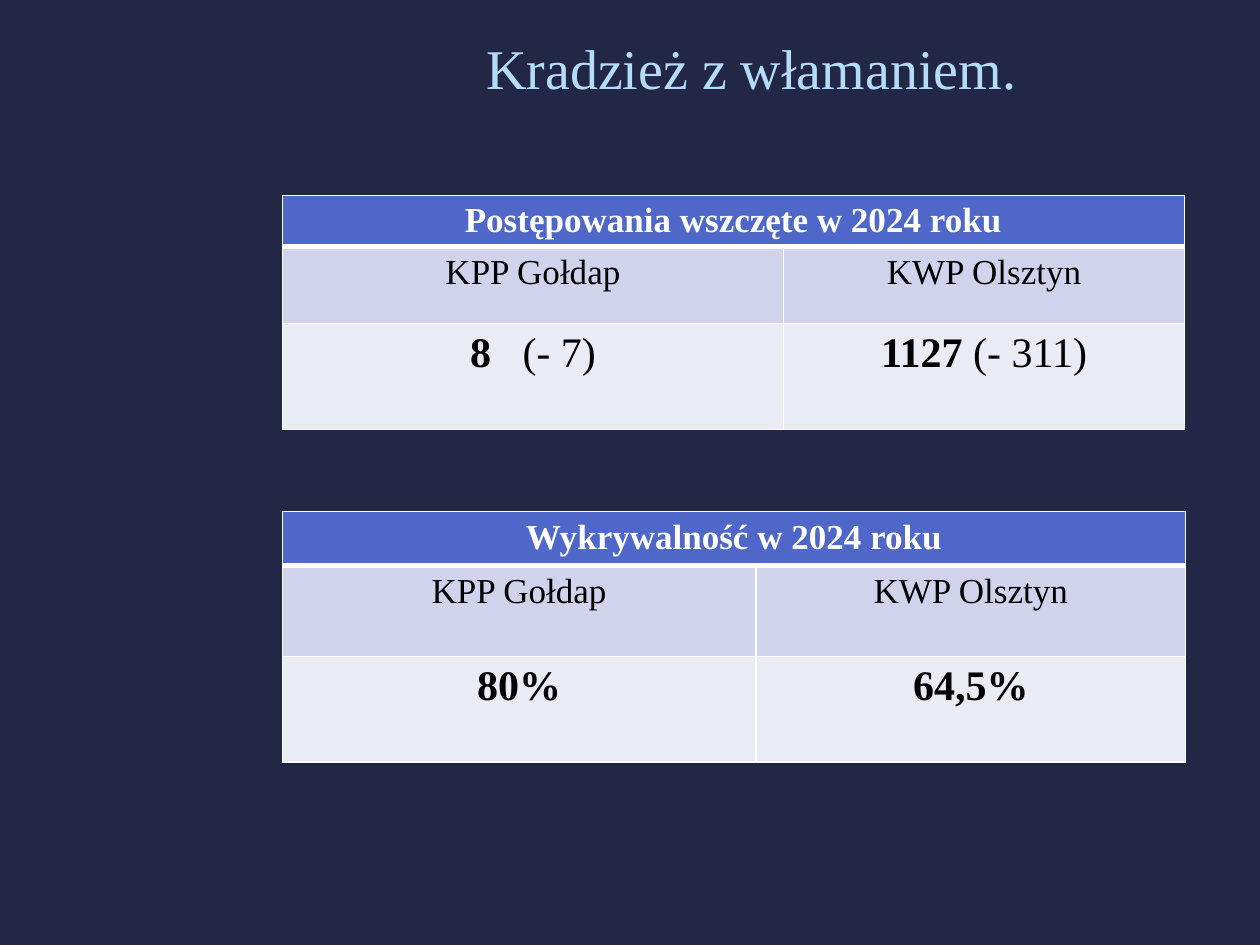
import pptx
import pptx.dml.color
import pptx.enum.text
import pptx.oxml.ns
import pptx.util
from lxml import etree

Inches, Pt = pptx.util.Inches, pptx.util.Pt
RGBColor = pptx.dml.color.RGBColor
CENTER = pptx.enum.text.PP_ALIGN.CENTER

NAVY = RGBColor(0x21, 0x27, 0x45)
SKY = RGBColor(0xB4, 0xDC, 0xFA)
BLUE = RGBColor(0x4E, 0x67, 0xC8)
LAVENDER = RGBColor(0xD0, 0xD3, 0xEB)
PALE = RGBColor(0xE9, 0xEB, 0xF5)
WHITE = RGBColor(0xFF, 0xFF, 0xFF)
BLACK = RGBColor(0, 0, 0)

# Per table row: fill and font of heading, unit names, figures
ROW_STYLES = [
    (BLUE, {"size": Pt(20), "bold": True, "color": WHITE}),
    (LAVENDER, {"size": Pt(20), "bold": False, "color": BLACK}),
    (PALE, {"size": Pt(24), "bold": True, "color": BLACK}),
]
UNITS = ["KPP Gołdap", "KWP Olsztyn"]


def format_font(font, values):
    for key, value in {"name": "Times New Roman", **values}.items():
        if key == "color":
            font.color.rgb = value
        else:
            setattr(font, key, value)


def set_borders(cell, bottom):
    properties = cell._tc.get_or_add_tcPr()
    for side, width in {"L": 1, "R": 1, "T": 1, "B": bottom}.items():
        line = etree.SubElement(
            properties, pptx.oxml.ns.qn(f"a:ln{side}"), w=str(Pt(width)))
        fill = etree.SubElement(line, pptx.oxml.ns.qn("a:solidFill"))
        etree.SubElement(fill, pptx.oxml.ns.qn("a:srgbClr"), val=str(WHITE))


def write_cell(cell, figure, change, gap, font_values):
    """Write a figure and, if given, its change in regular weight after a gap in points."""
    paragraph = cell.text_frame.paragraphs[0]
    paragraph.alignment = CENTER
    parts = [(figure, {})]
    if change:
        parts += [(" ", {"bold": False}), (change, {"bold": False})]
    for text, extra in parts:
        run = paragraph.add_run()
        run.text = text
        format_font(run.font, {**font_values, **extra})
        if text == " " and gap:
            run._r.get_or_add_rPr().set("spc", str(gap * 100))


def add_title(slide, text, left, top, width, height):
    title = slide.shapes.title
    title.left, title.top, title.width, title.height = left, top, width, height
    frame = title.text_frame
    frame.text = text
    frame.vertical_anchor = pptx.enum.text.MSO_ANCHOR.MIDDLE
    frame.paragraphs[0].alignment = CENTER
    format_font(frame.paragraphs[0].runs[0].font, {"size": Pt(32), "color": SKY})


def add_statistics(slide, heading, figures, left, top, column_widths, row_heights):
    table = slide.shapes.add_table(
        3, 2, left, top, sum(column_widths), sum(row_heights)).table
    for column, width in zip(table.columns, column_widths):
        column.width = width
    for row, height in zip(table.rows, row_heights):
        row.height = height
    table.cell(0, 0).merge(table.cell(0, 1))

    contents = [[(heading, "", 0)], [(unit, "", 0) for unit in UNITS], figures]
    for index, (row, (fill, font_values)) in enumerate(zip(contents, ROW_STYLES)):
        for cell in table.rows[index].cells:
            set_borders(cell, bottom=3 if index == 0 else 1)
            cell.fill.solid()
            cell.fill.fore_color.rgb = fill
        for column, (figure, change, gap) in enumerate(row):
            write_cell(table.cell(index, column), figure, change, gap, font_values)


def main():
    presentation = pptx.Presentation()
    presentation.slide_width, presentation.slide_height = Inches(10), Inches(7.5)
    slide = presentation.slides.add_slide(presentation.slide_layouts[5])
    slide.background.fill.solid()
    slide.background.fill.fore_color.rgb = NAVY

    add_title(slide, "Kradzież z włamaniem.",
              Inches(1.93), Inches(0), Inches(8.07), Inches(1.07))
    add_statistics(
        slide, "Postępowania wszczęte w 2024 roku",
        [("8", "(- 7)", 12), ("1127", "(- 311)", 0)],
        Inches(2.24), Inches(1.55), [Inches(3.98), Inches(3.18)],
        [Inches(0.4), Inches(0.61), Inches(0.84)])
    add_statistics(
        slide, "Wykrywalność w 2024 roku",
        [("80%", "", 0), ("64,5%", "", 0)],
        Inches(2.24), Inches(4.06), [Inches(3.76), Inches(3.41)],
        [Inches(0.43), Inches(0.72), Inches(0.84)])
    presentation.save("out.pptx")


if __name__ == "__main__":
    main()
